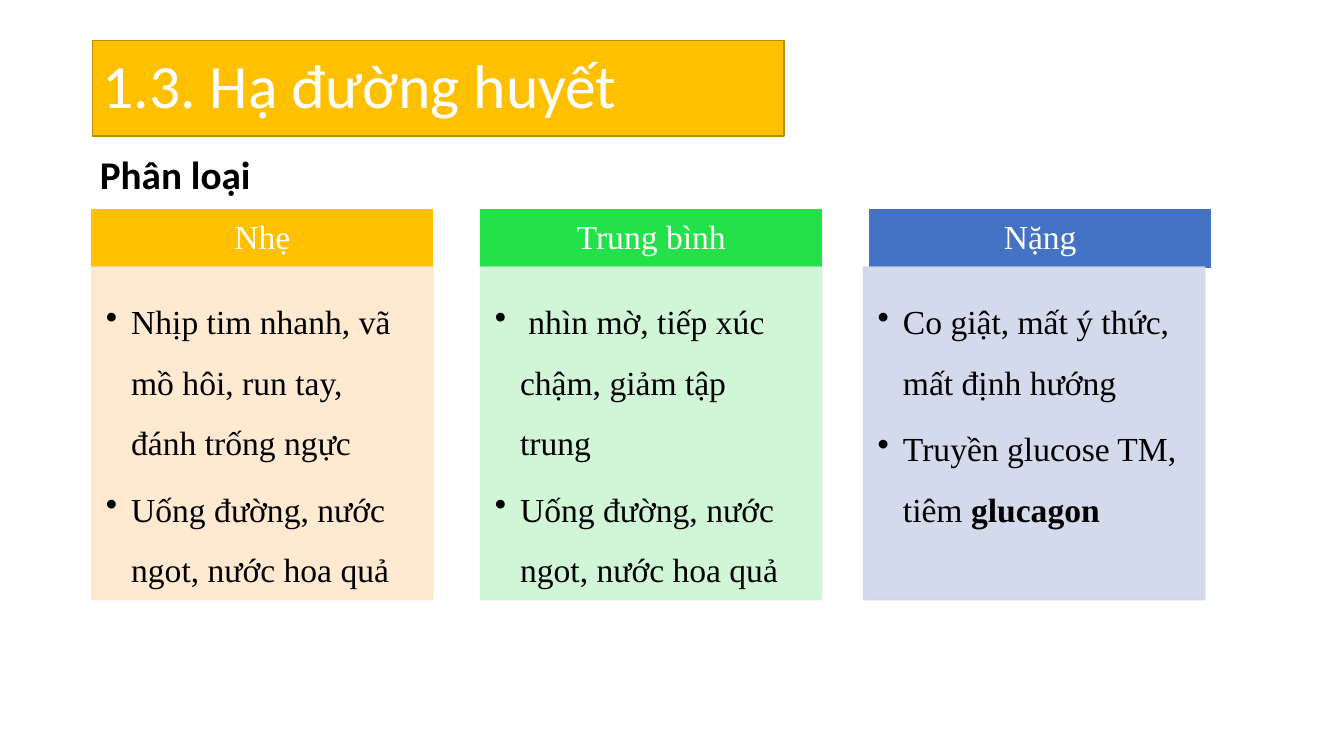
from lxml import etree
from pptx import Presentation
from pptx.dml.color import RGBColor
from pptx.enum.shapes import MSO_SHAPE
from pptx.enum.text import MSO_ANCHOR, MSO_AUTO_SIZE, PP_ALIGN
from pptx.oxml.ns import qn
from pptx.util import Pt

HUES = {
    "white": "FFFFFF", "black": "000000", "gold": "FFC000", "edge": "BD8E00",
    "cream": "FFE8CC", "green": "23E148", "mint": "CCF6D3",
    "blue": "4472C4", "haze": "CFD6EA",
}


def write(para, text, font="Times New Roman", size=24, hue="black", bold=False):
    run = para.add_run()
    run.text = text
    run.font.name = font
    run.font.size = Pt(size)
    run.font.bold = bold
    run.font.color.rgb = RGBColor.from_string(HUES[hue])


def panel(left, top, width, height, fill, line, insets, alpha=None):
    box = slide.shapes.add_shape(
        MSO_SHAPE.RECTANGLE, Pt(left), Pt(top), Pt(width), Pt(height))
    box.shadow.inherit = False
    box.fill.solid()
    box.fill.fore_color.rgb = RGBColor.from_string(HUES[fill])
    box.line.color.rgb = RGBColor.from_string(HUES[line])
    box.line.width = Pt(1)
    if alpha:
        for tint in box._element.spPr.iter(qn("a:srgbClr")):
            etree.SubElement(tint, qn("a:alpha"), val=str(alpha * 1000))
    frame = box.text_frame
    frame.word_wrap = True
    frame.margin_left, frame.margin_top, frame.margin_right, frame.margin_bottom = map(Pt, insets)
    return frame


deck = Presentation()
deck.slide_width, deck.slide_height = Pt(960), Pt(540)
slide = deck.slides.add_slide(deck.slide_layouts[6])

# Title bar
frame = panel(66.24, 28.8, 493.9, 68.4, "gold", "edge", (7.2, 3.6, 7.2, 3.6))
frame.vertical_anchor = MSO_ANCHOR.MIDDLE
para = frame.paragraphs[0]
para.alignment = PP_ALIGN.LEFT
para.line_spacing = 0.9
write(para, "1.3. Hạ đường huyết", font="Calibri", size=44, hue="white")

# Subtitle
frame = slide.shapes.add_textbox(Pt(64.3), Pt(103.7), Pt(123), Pt(41)).text_frame
frame.word_wrap = False
frame.auto_size = MSO_AUTO_SIZE.SHAPE_TO_FIT_TEXT
write(frame.paragraphs[0], "Phân loại", font="Calibri", size=28, bold=True)

# Severity columns: head, colours, body shift, then points as (text, bold) runs
sugar = [("Uống đường, nước ngot, nước hoa quả", False)]
levels = [
    ("Nhẹ", "gold", "cream", 0,
     [[("Nhịp tim nhanh, vã mồ hôi, run tay, đánh trống ngực", False)], sugar]),
    ("Trung bình", "green", "mint", 0,
     [[(" nhìn mờ, tiếp xúc chậm, giảm tập trung", False)], sugar]),
    ("Nặng", "blue", "haze", -4.3,
     [[("Co giật, mất ý thức, mất định hướng", False)],
      [("Truyền glucose TM, tiêm ", False), ("glucagon", True)]]),
]
for col, (head, dark, pale, shift, points) in enumerate(levels):
    left = 65.6 + col * 277.8

    # Column head
    frame = panel(left, 149.8, 243.6, 41, dark, dark, (13.7, 7.9, 13.7, 7.9))
    frame.vertical_anchor = MSO_ANCHOR.MIDDLE
    para = frame.paragraphs[0]
    para.alignment = PP_ALIGN.CENTER
    para.line_spacing = 0.9
    write(para, head, hue="white")

    # Column body
    frame = panel(left + shift, 190.8, 243.6, 237.6, pale, pale,
                  (10.1, 10.1, 13.7, 15.1), alpha=90)
    frame.vertical_anchor = MSO_ANCHOR.TOP
    for row, runs in enumerate(points):
        para = frame.add_paragraph() if row else frame.paragraphs[0]
        para.alignment = PP_ALIGN.LEFT
        para.line_spacing = 1.5
        para.space_after = Pt(4)
        props = para._p.get_or_add_pPr()
        props.set("marL", str(Pt(18)))
        props.set("indent", str(Pt(-18)))
        etree.SubElement(props, qn("a:buChar"), char="•")
        for text, bold in runs:
            write(para, text, bold=bold)

deck.save("out.pptx")
